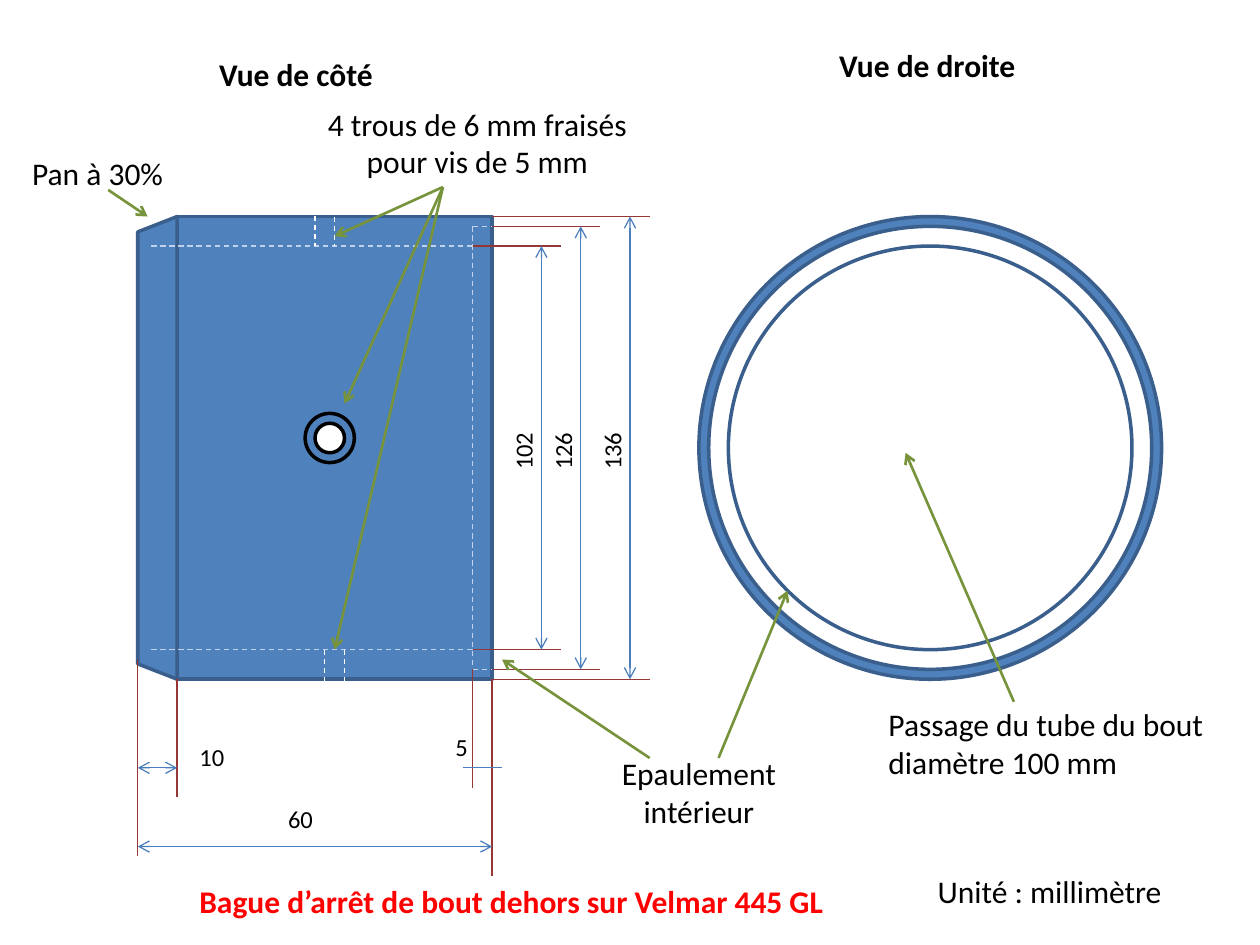
from pptx import Presentation
from pptx.dml.color import RGBColor
from pptx.enum.dml import MSO_LINE
from pptx.enum.shapes import MSO_CONNECTOR, MSO_SHAPE
from pptx.enum.text import PP_ALIGN
from pptx.oxml.ns import qn
from pptx.util import Inches, Pt

COLUMNS = 128
UNIT = Inches(10) / COLUMNS  # the slide is 128 columns by 96 rows

STEEL = RGBColor(0x4F, 0x81, 0xBD)
STEEL_EDGE = RGBColor(0x3A, 0x5F, 0x8C)
DIMENSION_BLUE = RGBColor(0x4B, 0x7E, 0xBC)
EXTENSION_RED = RGBColor(0x95, 0x37, 0x35)
LEADER_GREEN = RGBColor(0x77, 0x93, 0x3C)
HIDDEN_EDGE = RGBColor(0xC2, 0xD1, 0xED)
WHITE = RGBColor(0xFF, 0xFF, 0xFF)
BLACK = RGBColor(0, 0, 0)
RED = RGBColor(0xFF, 0, 0)

# Edges of the side view, in columns and rows
TIP, BEVEL, SHOULDER, FACE = 14, 18, 48, 50
OUTER = (22, 69)
RECESS = (23, 68)
BORE = (25, 66)


def grid(value):
    return round(value * UNIT)


def frame(column, row, width, height, rotation):
    """Turn the visible bounds into the bounds before a quarter turn."""
    if rotation % 180:
        column += (width - height) / 2
        row += (height - width) / 2
        width, height = height, width
    return [grid(value) for value in (column, row, width, height)]


def add_part(slide, preset, bounds, fill=STEEL, edge=STEEL_EDGE, rotation=0):
    part = slide.shapes.add_shape(preset, *frame(*bounds, rotation))
    part.rotation = rotation
    part.shadow.inherit = False
    part.fill.solid()
    part.fill.fore_color.rgb = fill
    part.line.color.rgb = edge
    part.line.width = Pt(2)
    return part


def add_circle(slide, column, row, diameter, fill, edge=STEEL_EDGE):
    add_part(slide, MSO_SHAPE.OVAL, (column, row, diameter, diameter), fill, edge)


def add_line(slide, start, end, color, width=0.75, dashed=False, arrows=()):
    """Draw a line; arrows names the ends that get one: headEnd, tailEnd."""
    points = [grid(value) for value in (*start, *end)]
    line = slide.shapes.add_connector(MSO_CONNECTOR.STRAIGHT, *points)
    line.line.color.rgb = color
    line.line.width = Pt(width)
    if dashed:
        line.line.dash_style = MSO_LINE.DASH
    properties = line._element.spPr
    outline = properties.find(qn("a:ln"))
    for arrow in arrows:
        outline.append(outline.makeelement(qn(f"a:{arrow}"), {"type": "arrow"}))
    properties.append(properties.makeelement(qn("a:effectLst"), {}))


def add_dimension(slide, start, end):
    add_line(slide, start, end, DIMENSION_BLUE, arrows=("headEnd", "tailEnd"))


def add_leader(slide, start, end):
    add_line(slide, start, end, LEADER_GREEN, 1.5, arrows=("tailEnd",))


def add_text(slide, text, bounds, size=18, color=BLACK, bold=False,
             align=PP_ALIGN.LEFT, rotation=0):
    box = slide.shapes.add_textbox(*frame(*bounds, rotation))
    box.rotation = rotation
    box.text_frame.word_wrap = True
    box.text_frame.text = text
    for paragraph in box.text_frame.paragraphs:
        paragraph.alignment = align
        for run in paragraph.runs:
            run.font.name = "Calibri"
            run.font.size = Pt(size)
            run.font.bold = bold
            run.font.color.rgb = color


def draw_side_view(slide):
    top, bottom = OUTER
    height = bottom - top
    add_part(slide, MSO_SHAPE.RECTANGLE, (BEVEL, top, FACE - BEVEL, height), rotation=90)
    bevel = add_part(slide, MSO_SHAPE.TRAPEZOID, (TIP, top, BEVEL - TIP, height), rotation=270)
    bevel.adjustments[0] = 0.39
    add_circle(slide, 31, 42, 5, STEEL, BLACK)
    add_circle(slide, 32, 43, 3, WHITE, BLACK)

    for row in BORE:
        add_line(slide, (SHOULDER, row), (15, row), HIDDEN_EDGE, dashed=True)
    for row in RECESS:
        add_line(slide, (SHOULDER, row), (FACE, row), HIDDEN_EDGE, dashed=True)
    add_line(slide, (SHOULDER, RECESS[0]), (SHOULDER, RECESS[1]), HIDDEN_EDGE, dashed=True)
    for column, start, end in ((32, 21, 25), (34, 22, 25), (33, 66, 70), (35, 66, 70)):
        add_line(slide, (column, start), (column, end), WHITE, dashed=True)


def draw_right_view(slide):
    for inset, fill in ((0, STEEL), (1, WHITE), (3, WHITE)):
        add_circle(slide, 71 + inset, OUTER[0] + inset, 47 - 2 * inset, fill)


def draw_diameters(slide):
    # label, rows measured, start and end of extension, dimension line, label column
    for label, rows, start, end, column, label_column in (
        ("136", OUTER, FACE, 66, 64, 60),
        ("126", RECESS, FACE, 61, 59, 55),
        ("102", BORE, SHOULDER, 57, 55, 51),
    ):
        for row in rows:
            add_line(slide, (start, row), (end, row), EXTENSION_RED)
        add_dimension(slide, (column, rows[0]), (column, rows[1]))
        add_text(slide, label, (label_column, 34, 4.3, 15), 14, rotation=270)


def draw_lengths(slide):
    for column, start, end in (
        (TIP, 67, 87), (BEVEL, 69, 81), (SHOULDER, 68, 80), (FACE, 69, 89),
    ):
        add_line(slide, (column, start), (column, end), EXTENSION_RED)
    add_dimension(slide, (TIP, 86), (FACE, 86))
    add_dimension(slide, (TIP, 78), (BEVEL, 78))
    add_line(slide, (SHOULDER - 1, 78), (FACE + 1, 78), DIMENSION_BLUE)
    for label, column, row in (("60", 28, 81), ("10", 19, 74.75), ("5", 45, 73.75)):
        add_text(slide, label, (column, row, 15, 4.3), 14)


def draw_notes(slide):
    add_text(slide, "Vue de droite", (84, 4, 31, 5.1), bold=True)
    add_text(slide, "Vue de côté", (21, 5, 31, 5.1), bold=True)
    add_text(slide, "Pan à 30%", (2, 15, 24, 5.1))
    add_text(slide, "4 trous de 6 mm fraisés\npour vis de 5 mm", (31, 10, 35, 9.1),
             align=PP_ALIGN.CENTER)
    add_text(slide, "Epaulement\nintérieur", (59, 76, 24, 9.1), align=PP_ALIGN.CENTER)
    add_text(slide, "Passage du tube du bout diamètre 100 mm", (89, 71, 37, 9.1))
    add_text(slide, "Unité : millimètre", (94, 88, 31, 5.1))
    add_text(slide, "Bague d’arrêt de bout dehors sur Velmar 445 GL", (19, 89, 74, 5.1),
             color=RED, bold=True)

    for hole in ((35, 41), (34, 66), (34, 24)):
        add_leader(slide, (45, 19), hole)
    add_leader(slide, (11, 19.3), (15, 22))
    add_leader(slide, (66, 77), (51, 67))
    add_leader(slide, (73, 77), (80, 60))
    add_leader(slide, (103, 71.3), (92, 46))


def main():
    presentation = Presentation()
    presentation.slide_width = Inches(10)
    presentation.slide_height = Inches(7.5)
    slide = presentation.slides.add_slide(presentation.slide_layouts[6])
    draw_side_view(slide)
    draw_right_view(slide)
    draw_diameters(slide)
    draw_lengths(slide)
    draw_notes(slide)
    presentation.save("out.pptx")


if __name__ == "__main__":
    main()
